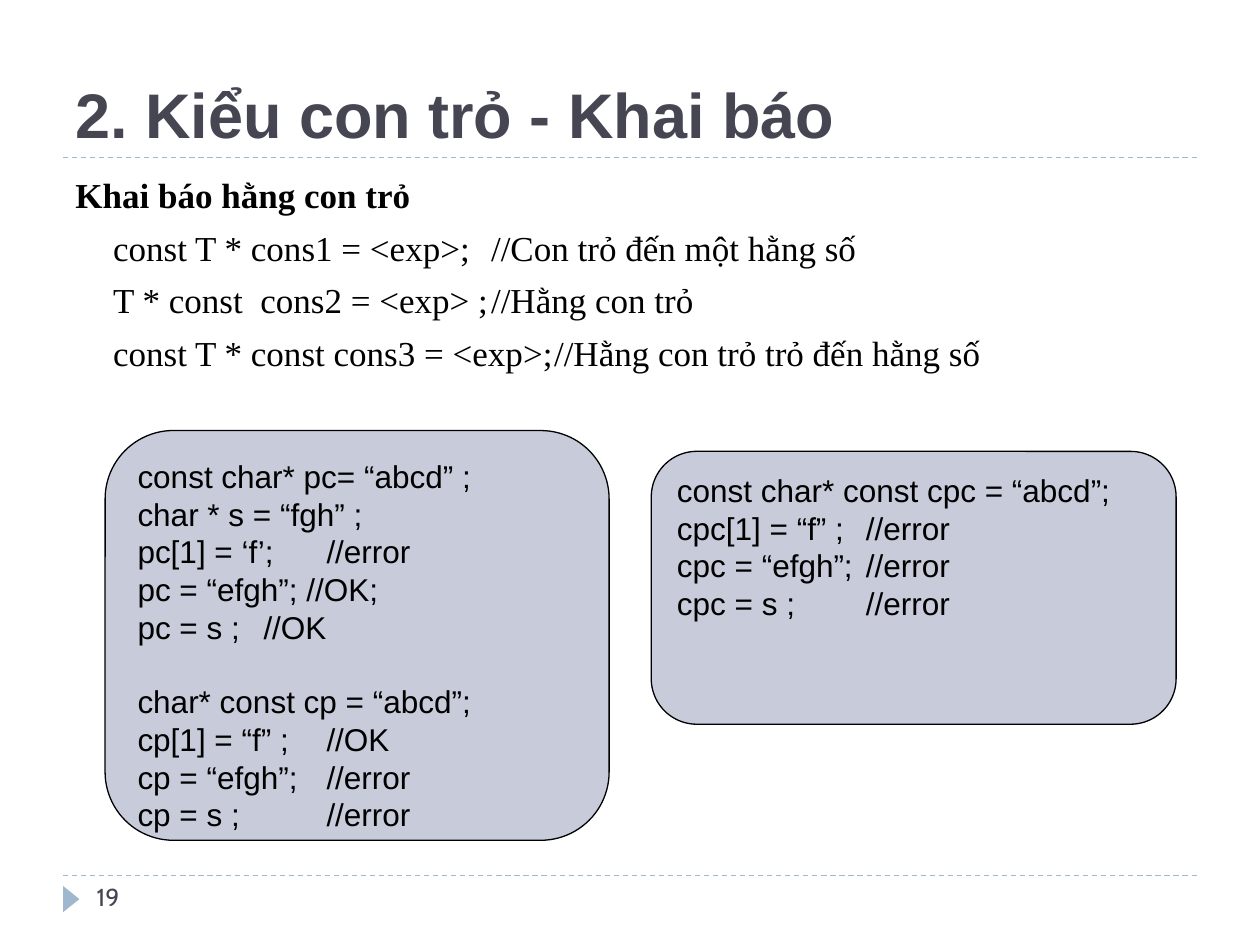
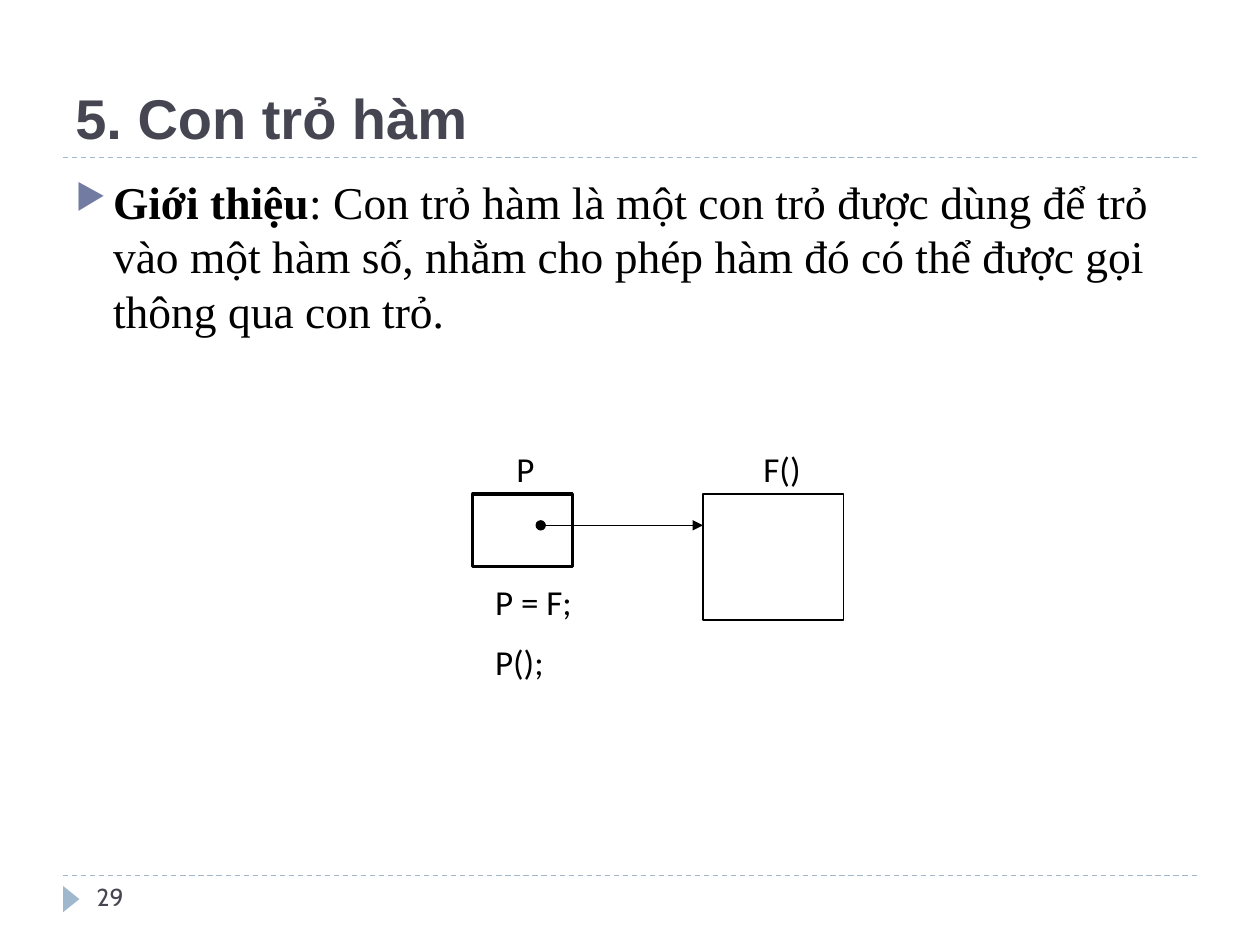
import dataclasses
import typing

import lxml.etree
import pptx
import pptx.dml.color
import pptx.enum.dml
import pptx.enum.shapes
import pptx.enum.text
import pptx.oxml.ns
import pptx.util

Cm = pptx.util.Cm
Pt = pptx.util.Pt
SHAPES = pptx.enum.shapes.MSO_SHAPE

COLORS = {
    "ink": "000000",
    "title": "464653",
    "rule": "9FB8CD",
    "bullet": "727CA3",
    "code": "C7CBDA",
    "paper": "FFFFFF",
}
MARGIN, CONTENT_WIDTH = 1.27, 22.86
TITLE_RULE_Y, FOOTER_RULE_Y = 3.18, 17.65
INDENT = 0.76
CODE_LINE = 20.7  # height of one code line in points


@dataclasses.dataclass(frozen=True)
class Area:
    left: float
    top: float
    width: float
    height: float

    def lengths(self) -> list:
        return [Cm(value) for value in (self.left, self.top, self.width, self.height)]


@dataclasses.dataclass(frozen=True)
class Style:
    font: str
    size: float
    color: str = "ink"
    bold: bool = False


@dataclasses.dataclass(frozen=True)
class Line:
    runs: list[tuple[str, Style]]
    before: float = 0
    after: float = 0
    margin: float = 0
    indent: float = 0
    bullet: str = ""


@dataclasses.dataclass(frozen=True)
class Block:
    area: Area
    lines: list[Line] = dataclasses.field(default_factory=list)
    preset: typing.Any = SHAPES.RECTANGLE
    fill: str = "paper"
    border: float = 0
    rotation: float = 0


BODY = Area(MARGIN, 3.38, CONTENT_WIDTH, 13.72)
CODE = Style("Arial", 18)
LABEL = Style("Calibri", 20)
NUMBER = Style("Cabin", 14, "title")


def rgb(name: str) -> pptx.dml.color.RGBColor:
    return pptx.dml.color.RGBColor.from_string(COLORS[name])


def add_child(parent, tag: str, **attributes: str):
    return lxml.etree.SubElement(parent, pptx.oxml.ns.qn(tag), attributes)


# Text
def write_lines(text_frame, lines: list[Line], anchor: str = "TOP") -> None:
    text_frame.word_wrap = True
    text_frame.vertical_anchor = getattr(pptx.enum.text.MSO_ANCHOR, anchor)
    for index, line in enumerate(lines):
        paragraph = text_frame.paragraphs[0] if index == 0 else text_frame.add_paragraph()
        formats = {
            "alignment": pptx.enum.text.PP_ALIGN.LEFT,
            "space_before": Pt(line.before),
            "space_after": Pt(line.after),
        }
        for name, value in formats.items():
            setattr(paragraph, name, value)
        properties = paragraph._p.get_or_add_pPr()
        properties.set("marL", str(int(Cm(line.margin))))
        properties.set("indent", str(int(Cm(line.indent))))
        if line.bullet:
            color = add_child(properties, "a:buClr")
            add_child(color, "a:srgbClr", val=COLORS["bullet"])
            add_child(properties, "a:buSzPct", val="76000")
            add_child(properties, "a:buChar", char=line.bullet)
        for text, style in line.runs:
            run = paragraph.add_run()
            run.text = text
            settings = {"name": style.font, "size": Pt(style.size), "bold": style.bold}
            for name, value in settings.items():
                setattr(run.font, name, value)
            run.font.color.rgb = rgb(style.color)


def add_text(shapes, area: Area, lines: list[Line], anchor: str = "TOP") -> None:
    write_lines(shapes.add_textbox(*area.lengths()).text_frame, lines, anchor)


# Shapes and lines
def add_block(shapes, block: Block) -> None:
    shape = shapes.add_shape(block.preset, *block.area.lengths())
    shape.shadow.inherit = False
    shape.rotation = block.rotation
    shape.fill.solid()
    shape.fill.fore_color.rgb = rgb(block.fill)
    if block.border:
        shape.line.color.rgb = rgb("ink")
        shape.line.width = Pt(block.border)
    else:
        shape.line.fill.background()
    if block.lines:
        write_lines(shape.text_frame, block.lines)


def add_line(shapes, left: float, right: float, y: float, color: str):
    connector = shapes.add_connector(
        pptx.enum.shapes.MSO_CONNECTOR.STRAIGHT, Cm(left), Cm(y), Cm(right), Cm(y))
    connector.line.color.rgb = rgb(color)
    connector.line.width = Pt(0.75)
    add_child(connector._element.spPr, "a:effectLst")
    return connector


# Title, rules and page number shared by the slides
def add_framed_slide(presentation, title: str, title_size: float, number: str):
    slide = presentation.slides.add_slide(presentation.slide_layouts[6])
    for y in (FOOTER_RULE_Y, TITLE_RULE_Y):
        rule = add_line(slide.shapes, MARGIN, MARGIN + CONTENT_WIDTH, y, "rule")
        rule.line.dash_style = pptx.enum.dml.MSO_LINE.DASH
    add_block(slide.shapes, Block(Area(1.17, 17.96, 0.53, 0.33),
                                  preset=SHAPES.ISOSCELES_TRIANGLE, fill="rule", rotation=90))
    title_style = Style("Arial", title_size, "title", True)
    add_text(slide.shapes, Area(MARGIN, 0.43, CONTENT_WIDTH, 2.74),
             [Line([(title, title_style)])], "BOTTOM")
    add_text(slide.shapes, Area(1.7, FOOTER_RULE_Y, 5.51, 1.02), [Line([(number, NUMBER)])])
    return slide


def code_lines(*groups: list[str]) -> list[Line]:
    """Groups of code lines, one line height apart."""
    return [Line([(text, CODE)], before=CODE_LINE if group_index and not index else 0)
            for group_index, group in enumerate(groups)
            for index, text in enumerate(group)]


def label_lines(*texts: str) -> list[Line]:
    return [Line([(text, LABEL)], after=10) for text in texts]


# Constant pointers
def build_declaration_slide(presentation) -> None:
    slide = add_framed_slide(presentation, "2. Kiểu con trỏ - Khai báo", 36, "19")
    heading = Style("Times New Roman", 20, bold=True)
    plain = dataclasses.replace(heading, bold=False)
    declarations = [
        "const T * cons1 = <exp>;\t//Con trỏ đến một hằng số",
        "T * const  cons2 = <exp> ;\t//Hằng con trỏ",
        "const T * const cons3 = <exp>;\t//Hằng con trỏ trỏ đến hằng số",
    ]
    add_text(slide.shapes, BODY, [
        Line([("Khai báo hằng con trỏ", heading)], before=6, margin=INDENT, indent=-INDENT),
        *(Line([(text, plain)], before=6, margin=INDENT) for text in declarations),
    ])
    pointer_code = code_lines(
        ["const char* pc= “abcd” ;", "char * s = “fgh” ;", "pc[1] = ‘f’; \t//error",
         "pc = “efgh”; //OK;", "pc = s ; \t//OK"],
        ["char* const cp = “abcd”;", "cp[1] = “f” ; \t//OK", "cp = “efgh”;\t//error",
         "cp = s ;\t\t//error"])
    constant_code = code_lines(
        ["const char* const cpc = “abcd”;", "cpc[1] = “f” ; \t//error",
         "cpc = “efgh”;\t//error", "cpc = s ;\t\t//error"])
    for area, lines in ((Area(2.12, 8.68, 10.16, 8.26), pointer_code),
                        (Area(13.13, 9.1, 10.58, 5.5), constant_code)):
        add_block(slide.shapes, Block(area, lines, SHAPES.ROUNDED_RECTANGLE, "code", 0.75))


# Function pointers
def build_function_slide(presentation) -> None:
    slide = add_framed_slide(presentation, "5. Con trỏ hàm", 32, "29")
    strong = Style("Times New Roman", 26, bold=True)
    plain = dataclasses.replace(strong, bold=False)
    explanation = (": Con trỏ hàm là một con trỏ được dùng để trỏ vào một hàm số, "
                   "nhằm cho phép hàm đó có thể được gọi thông qua con trỏ.")
    add_text(slide.shapes, BODY, [
        Line([("Giới thiệu", strong), (explanation, plain)],
             before=6, margin=INDENT, indent=-INDENT, bullet="▶")])

    diagram = slide.shapes.add_group_shape().shapes
    label_top, box_top, function_left = 8.89, 9.96, 14.17
    for block in (
        Block(Area(9.73, 11.58, 4.34, 4.22), label_lines("P = F;", "P();")),
        Block(Area(15.14, label_top, 2.01, 1.12), label_lines("F()")),
        Block(Area(10.16, label_top, 0.97, 1.12), label_lines("P")),
        Block(Area(9.53, box_top, 2.01, 1.47), border=1.75),
        Block(Area(function_left, box_top, 2.84, 2.54), border=0.75),
    ):
        add_block(diagram, block)
    arrow = add_line(diagram, 10.9, function_left, 10.59, "ink")
    outline = arrow.line._get_or_add_ln()
    add_child(outline, "a:headEnd", type="oval")
    add_child(outline, "a:tailEnd", type="triangle")


def main() -> None:
    presentation = pptx.Presentation()
    presentation.slide_width, presentation.slide_height = Cm(25.4), Cm(19.05)
    build_declaration_slide(presentation)
    build_function_slide(presentation)
    presentation.save("out.pptx")


if __name__ == "__main__":
    main()
